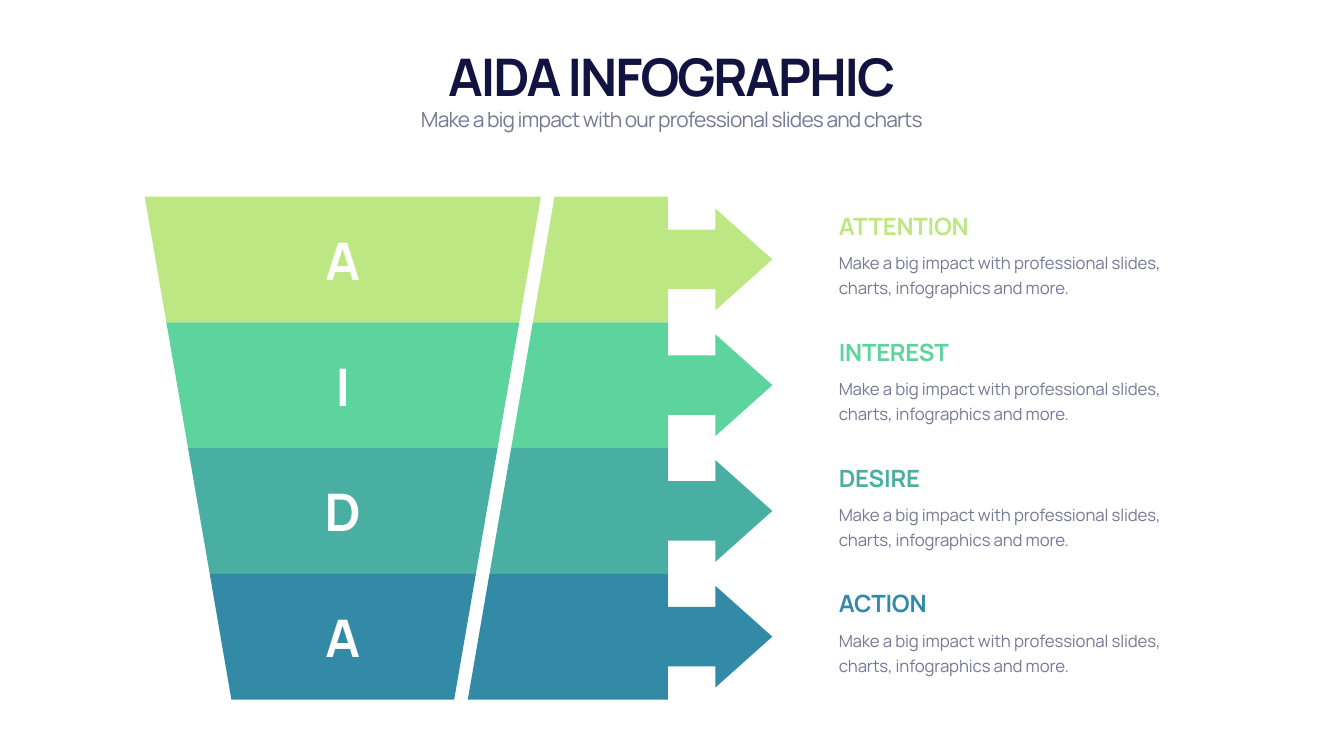
from collections import namedtuple
from pptx import Presentation
from pptx.dml.color import RGBColor
from pptx.enum import text
from pptx.util import Inches, Pt

NAVY = RGBColor(0x11, 0x13, 0x40)
GRAY = RGBColor(0x74, 0x79, 0x94)
WHITE = RGBColor(0xFF, 0xFF, 0xFF)
LIME = RGBColor(0xBC, 0xE7, 0x83)
GREEN = RGBColor(0x5D, 0xD3, 0x9E)
TEAL = RGBColor(0x49, 0xAF, 0xA3)
BLUE = RGBColor(0x33, 0x8A, 0xA7)

FONT = "Manrope"
BODY = "Make a big impact with professional slides, charts, infographics and more."
STAGES = [
    ("A", "ATTENTION", LIME),
    ("I", "INTEREST", GREEN),
    ("D", "DESIRE", TEAL),
    ("A", "ACTION", BLUE),
]
SLANT = 0.43
GAP = 0.27

Box = namedtuple("Box", "left top width height")
CENTER, LEFT = text.PP_ALIGN.CENTER, text.PP_ALIGN.LEFT
TOP, MIDDLE, BOTTOM = (text.MSO_ANCHOR.TOP, text.MSO_ANCHOR.MIDDLE,
                       text.MSO_ANCHOR.BOTTOM)


def apply(target, values):
    for name, value in values.items():
        setattr(target, name, value)


def write(shape, box, words, size, color, bold=False, spacing=0,
          align=LEFT, anchor=TOP, line=1.0):
    apply(shape, {name: Inches(value) for name, value in box._asdict().items()})
    frame = shape.text_frame
    apply(frame, {"word_wrap": True, "auto_size": text.MSO_AUTO_SIZE.NONE,
                  "vertical_anchor": anchor})
    para = frame.paragraphs[0]
    apply(para, {"alignment": align, "line_spacing": line, "space_before": Pt(0)})
    span = para.add_run()
    span.text = words
    apply(span.font, {"name": FONT, "size": Pt(size), "bold": bold})
    span.font.color.rgb = color
    span.font._element.set("spc", str(round(spacing * 100)))


def add_text(page, box, *args, **formats):
    write(page.shapes.add_textbox(0, 0, 0, 0), box, *args, **formats)


def add_outline(page, points, color):
    start, *rest = [(Inches(x), Inches(y)) for x, y in points]
    builder = page.shapes.build_freeform(*start)
    builder.add_line_segments(rest, close=True)
    shape = builder.convert_to_shape()
    shape.shadow.inherit = False
    shape.fill.solid()
    shape.fill.fore_color.rgb = color
    shape.line.fill.background()


def add_heading(page, box):
    write(page.shapes.title, box._replace(height=1.35), "AIDA INFOGRAPHIC",
          74, NAVY, bold=True, spacing=-2.9, align=CENTER, anchor=BOTTOM)
    write(page.placeholders[1], box._replace(top=box.top + 1.25, height=0.61),
          "Make a big impact with our professional slides and charts",
          30, GRAY, spacing=-1.2, align=CENTER)


def add_funnel_band(page, box, letter, color):
    right, bottom = box.left + box.width, box.top + box.height
    add_outline(page, [(box.left, box.top), (right, box.top),
                       (right - SLANT, bottom), (box.left + SLANT, bottom)], color)
    label = Box(box.left + box.width / 2 - 0.77, box.top + box.height / 2 - 0.67,
                1.54, 1.35)
    add_text(page, label, letter, 74, WHITE, bold=True, spacing=-2.9,
             align=CENTER, anchor=MIDDLE)


def add_arrow_band(page, box, color):
    tip, bottom = box.left + box.width, box.top + box.height
    middle = box.top + box.height / 2
    neck, head = tip - 2.07, tip - 1.13
    upper = [(box.left, box.top), (neck, box.top), (neck, middle - 0.59),
             (head, middle - 0.59), (head, middle - 1.01)]
    lower = [(x, 2 * middle - y) for x, y in reversed(upper[1:])]
    add_outline(page, upper + [(tip, middle)] + lower
                + [(box.left - SLANT, bottom)], color)


def add_caption(page, box, heading, color):
    add_text(page, box._replace(top=box.top + 0.25, height=0.67), heading, 34,
             color, bold=True, spacing=-0.3, anchor=BOTTOM)
    add_text(page, box._replace(top=box.top + 0.97, height=1.09), BODY, 24,
             GRAY, spacing=-0.2, line=Pt(36))


def add_stages(page, box):
    height = box.height / len(STAGES)
    for index, (letter, heading, color) in enumerate(STAGES):
        shift = SLANT * index
        top = box.top + height * index
        band = Box(box.left + shift, top, 7.86 - 2 * shift, height)
        arrow_left = band.left + band.width + GAP
        tip = box.left + 12.45
        add_funnel_band(page, band, letter, color)
        add_arrow_band(page, Box(arrow_left, top, tip - arrow_left, height), color)
        add_caption(page, Box(box.left + 13.67, top, 7.36, height), heading, color)


def main():
    deck = Presentation()
    deck.slide_width, deck.slide_height = Inches(26.66), Inches(15)
    page = deck.slides.add_slide(deck.slide_layouts[0])
    add_heading(page, Box(1.66, 0.82, 23.33, 1.86))
    add_stages(page, Box(2.87, 3.9, 21.03, 9.98))
    deck.save("out.pptx")


if __name__ == "__main__":
    main()
